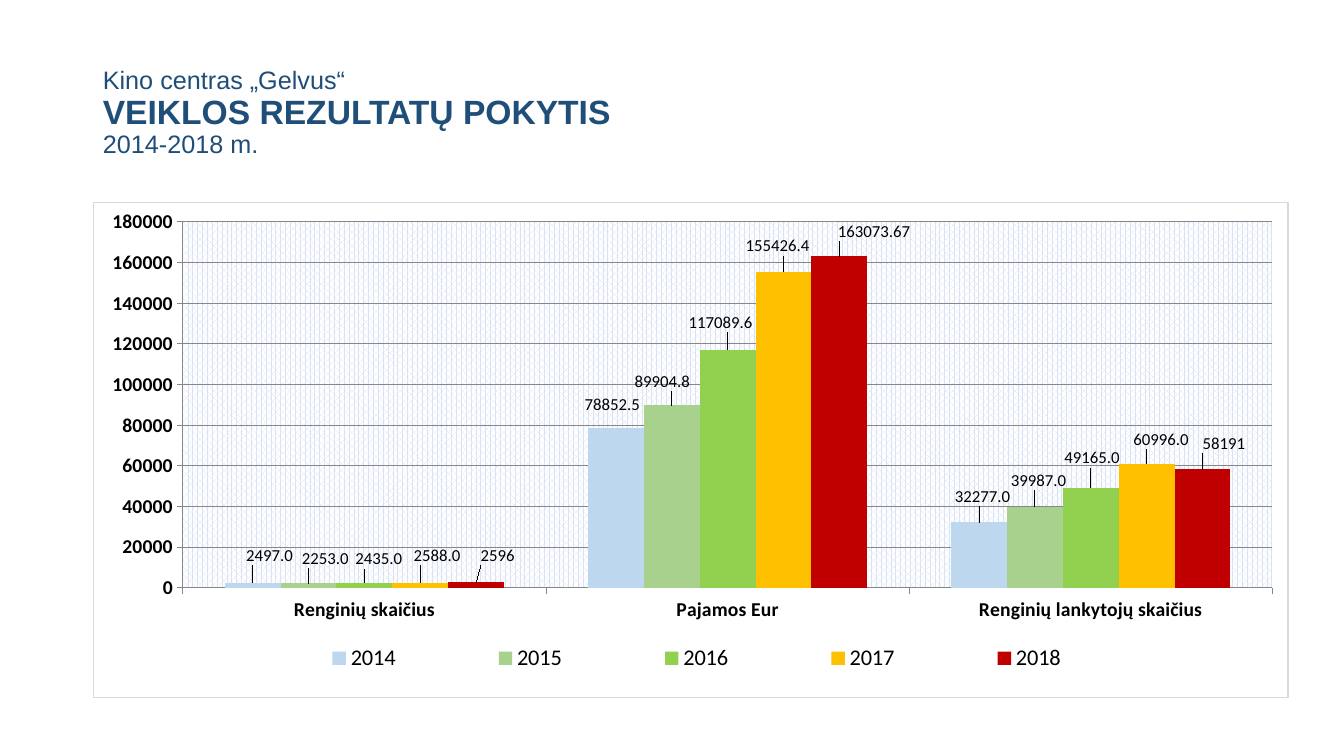
from lxml.etree import SubElement
from pptx import Presentation
from pptx.chart.data import CategoryChartData
from pptx.dml.color import RGBColor
from pptx.enum.chart import XL_CHART_TYPE, XL_LABEL_POSITION, XL_LEGEND_POSITION, XL_TICK_MARK
from pptx.enum.text import MSO_ANCHOR, PP_ALIGN
from pptx.oxml import parse_xml
from pptx.oxml.ns import nsdecls, qn
from pptx.util import Inches, Pt

NAVY = RGBColor(0x1F, 0x4E, 0x79)
BLACK = RGBColor(0, 0, 0)
GRAY = RGBColor(0x87, 0x87, 0x87)
BLUE = RGBColor(0xBD, 0xD7, 0xEE)
SAGE = RGBColor(0xA9, 0xD1, 0x8E)
GREEN = RGBColor(0x92, 0xD0, 0x50)
GOLD = RGBColor(0xFF, 0xC0, 0x00)
RED = RGBColor(0xC0, 0x00, 0x00)
PALE = RGBColor(0xDA, 0xE3, 0xF3)
WHITE = RGBColor(0xFF, 0xFF, 0xFF)
EDGE = RGBColor(0xD9, 0xD9, 0xD9)

GROUPS = ["Renginių skaičius", "Pajamos Eur", "Renginių lankytojų skaičius"]
YEARS = [
    ("2014", BLUE, "0.0", [2497, 78852.5, 32277], [(1.4, -2.6), (-0.3, -1.8), (0.3, -2.4)]),
    ("2015", SAGE, "0.0", [2253, 89904.8, 39987], [(1.4, -2.2), (-0.8, -2), (0.3, -2.4)]),
    ("2016", GREEN, "0.0", [2435, 117089.6, 49165], [(1.2, -2), (-0.6, -2.6), (0.1, -3.2)]),
    ("2017", GOLD, "0.0", [2588, 155426.4, 60996], [(1.4, -2.6), (-0.5, -2.4), (1.2, -2)]),
    ("2018", RED, "General", [2596, 163073.67, 58191], [(1.8, -2.6), (2.9, -2.2), (1.8, -2.4)]),
]


def style(font, size, color=BLACK, bold=False, name="Calibri"):
    font.size, font.bold, font.name = Pt(size), bold, name
    font.color.rgb = color


def write(para, text, **form):
    run = para.add_run()
    run.text = text
    style(run.font, **form)


def layout(**parts):
    node = parse_xml(f'<c:layout {nsdecls("c")}><c:manualLayout/></c:layout>')
    for tag, val in parts.items():
        SubElement(node[0], qn("c:" + tag)).set("val", str(val))
    return node


def add_head(slide, box):
    head = slide.shapes.title
    head.left, head.top, head.width, head.height = box
    frame = head.text_frame
    frame.word_wrap = True
    frame.vertical_anchor = MSO_ANCHOR.MIDDLE
    para = frame.paragraphs[0]
    para.alignment = PP_ALIGN.LEFT
    para.line_spacing = 0.9
    lines = [("Kino centras „Gelvus“", 18, False),
             ("VEIKLOS REZULTATŲ POKYTIS", 24, True),
             ("2014-2018 m.", 18, False)]
    for row, (text, size, bold) in enumerate(lines):
        if row:
            para.add_line_break()
        write(para, text, size=size, bold=bold, color=NAVY, name="Arial")


def set_axis(axis):
    axis.major_tick_mark = XL_TICK_MARK.OUTSIDE
    axis.minor_tick_mark = XL_TICK_MARK.NONE
    axis.format.line.color.rgb = GRAY
    style(axis.tick_labels.font, 14, bold=True)


def set_tags(series, form, shifts):
    tags = series.data_labels
    tags.show_value = True
    tags.number_format, tags.number_format_is_linked = form, False
    tags.position = XL_LABEL_POSITION.OUTSIDE_END
    style(tags.font, 12)
    for spot in range(len(shifts)):
        tag = series.points[spot].data_label
        style(tag.font, 12)
        tag.position = XL_LABEL_POSITION.OUTSIDE_END
    for node, (dx, dy) in zip(tags._element.findall(qn("c:dLbl")), shifts):
        place = layout(x=dx / 100, y=dy / 100)
        node[0].addnext(place)
        place.addnext(parse_xml(
            f'<c:numFmt {nsdecls("c")} formatCode="{form}" sourceLinked="0"/>'))


def set_area(chart):
    space = chart._chartSpace
    plot = space.chart.plotArea
    for old in plot.findall(qn("c:layout")):
        plot.remove(old)
    plot.insert(0, layout(layoutTarget="inner", xMode="edge", yMode="edge",
                          x=0.075, y=0.04, w=0.912, h=0.738))
    plot.append(parse_xml(
        f'<c:spPr {nsdecls("c", "a")}><a:pattFill prst="pct70">'
        f'<a:fgClr><a:srgbClr val="{PALE}"/></a:fgClr>'
        f'<a:bgClr><a:srgbClr val="{WHITE}"/></a:bgClr></a:pattFill></c:spPr>'))
    space.chart.addnext(parse_xml(
        f'<c:spPr {nsdecls("c", "a")}><a:solidFill><a:srgbClr val="{WHITE}"/></a:solidFill>'
        f'<a:ln w="{Pt(0.75)}"><a:solidFill><a:srgbClr val="{EDGE}"/>'
        '</a:solidFill></a:ln></c:spPr>'))


def add_bars(slide, box):
    data = CategoryChartData()
    data.categories = GROUPS
    for name, _, form, vals, _ in YEARS:
        data.add_series(name, vals, number_format=form)
    chart = slide.shapes.add_chart(XL_CHART_TYPE.COLUMN_CLUSTERED, *box, data).chart
    chart.has_title = False
    style(chart.font, 10)
    plot = chart.plots[0]
    plot.gap_width, plot.overlap, plot.vary_by_categories = 150, 0, False
    for series, (_, color, form, _, shifts) in zip(plot.series, YEARS):
        series.format.fill.solid()
        series.format.fill.fore_color.rgb = color
        set_tags(series, form, shifts)
    set_axis(chart.category_axis)
    axis = chart.value_axis
    set_axis(axis)
    axis.minimum_scale, axis.maximum_scale, axis.major_unit = 0, 180000, 20000
    axis.tick_labels.number_format = "0"
    axis.tick_labels.number_format_is_linked = False
    axis.major_gridlines.format.line.color.rgb = GRAY
    chart.has_legend = True
    legend = chart.legend
    legend.position = XL_LEGEND_POSITION.BOTTOM
    legend.include_in_layout = False
    style(legend.font, 16)
    node = legend._element
    for old in node.findall(qn("c:layout")):
        node.remove(old)
    node.find(qn("c:legendPos")).addnext(layout(
        xMode="edge", yMode="edge", x=0.12, y=0.88, w=0.77, h=0.08))
    set_area(chart)


def main():
    deck = Presentation()
    deck.slide_width, deck.slide_height = Inches(13.33), Inches(7.5)
    slide = deck.slides.add_slide(deck.slide_layouts[5])
    add_head(slide, [Inches(n) for n in (0.92, 0.4, 11.5, 1.45)])
    add_bars(slide, [Inches(n) for n in (0.92, 2, 11.86, 4.93)])
    deck.save("out.pptx")


if __name__ == "__main__":
    main()
